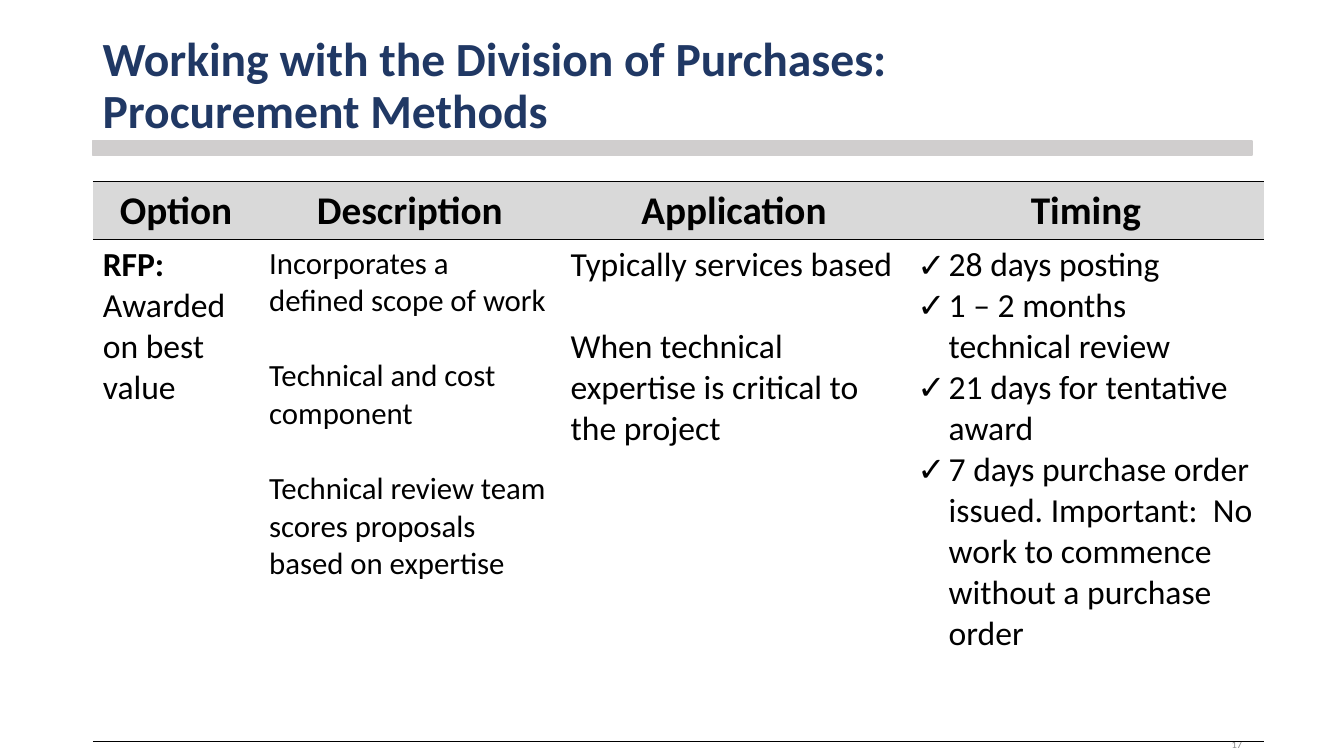
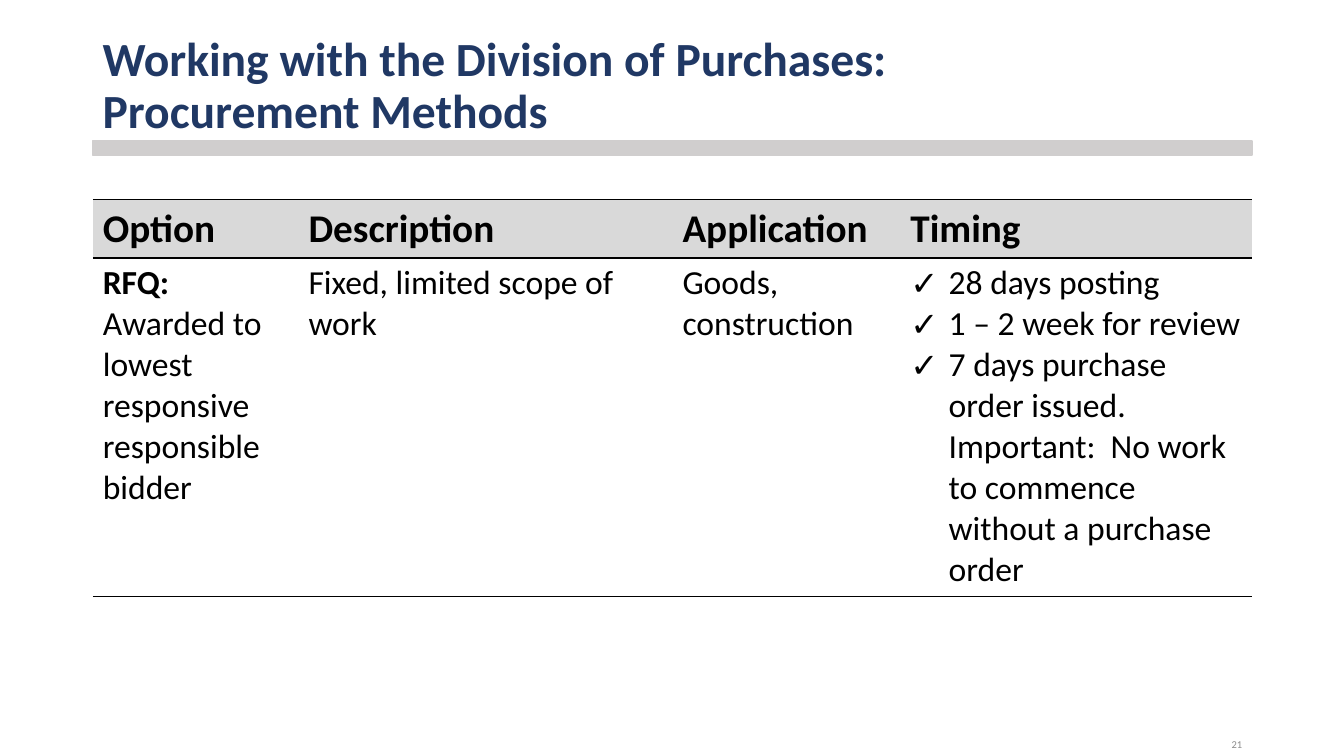
import pptx
import pptx.dml.color
import pptx.enum.shapes
import pptx.enum.text
import pptx.oxml.ns
import pptx.util
from lxml import etree

Inches = pptx.util.Inches
Pt = pptx.util.Pt
ALIGN = pptx.enum.text.PP_ALIGN
ANCHOR = pptx.enum.text.MSO_ANCHOR


def colour(value):
    return pptx.dml.color.RGBColor.from_string(value)


def add_xml(parent, tag, **attributes):
    return etree.SubElement(parent, pptx.oxml.ns.qn(tag), attributes)


def write(frame, text, size=24, ink="000000", bold=False, align=ALIGN.LEFT,
          lead="", gap=0, spacing=None, indent=0):
    for number, line in enumerate(text.split("\n")):
        paragraph = frame.add_paragraph() if number else frame.paragraphs[0]
        paragraph.alignment = align
        if spacing:
            paragraph.line_spacing = spacing
        if number and gap:
            paragraph.space_before = Pt(gap)
        if indent:
            properties = paragraph._p.get_or_add_pPr()
            properties.set("marL", str(Inches(indent)))
            properties.set("indent", str(-Inches(indent)))
            add_xml(properties, "a:buFont", typeface="Arial")
            add_xml(properties, "a:buChar", char="✓")
        start = len(lead) if lead and line.startswith(lead) else 0
        for part, heavy in ((line[:start], True), (line[start:], bold)):
            if part:
                run = paragraph.add_run()
                run.text = part
                run.font.name = Deck.FONT
                run.font.size = Pt(size)
                run.font.bold = heavy
                run.font.color.rgb = colour(ink)


class Deck:
    """Holds the shared style and the current slide of the procurement deck."""

    FONT = "Calibri"
    NAVY = "203864"
    BAND = "D0CECE"
    HEADER = "D9D9D9"
    RULE = "000000"
    FOOTER = "8C8C8C"
    LEFT = 0.92
    WIDTH = 11.5
    HEADER_HEIGHT = 0.58

    def __init__(self):
        self.presentation = pptx.Presentation()
        self.presentation.slide_width = Inches(13.33)
        self.presentation.slide_height = Inches(7.5)
        self.slide = None

    def add_slide(self, title, number):
        layout = self.presentation.slide_layouts[6]
        self.slide = self.presentation.slides.add_slide(layout)
        self.band()
        self.label(title, self.LEFT, 0.4, self.WIDTH, 0.93,
                   size=34, ink=self.NAVY, bold=True, spacing=0.9)
        self.label(number, 9.42, 7.26, 3, 0.25,
                   size=7.5, ink=self.FOOTER, align=ALIGN.RIGHT)

    def band(self):
        band = self.slide.shapes.add_shape(
            pptx.enum.shapes.MSO_SHAPE.RECTANGLE, Inches(self.LEFT),
            Inches(1.4), Inches(self.WIDTH), Inches(0.14))
        band.shadow.inherit = False
        band.fill.solid()
        band.fill.fore_color.rgb = colour(self.BAND)
        band.line.color.rgb = colour(self.BAND)
        band.line.width = Pt(1)

    def label(self, text, left, top, width, height, **style):
        label = self.slide.shapes.add_textbox(
            Inches(left), Inches(top), Inches(width), Inches(height))
        frame = label.text_frame
        frame.word_wrap = True
        frame.vertical_anchor = ANCHOR.MIDDLE
        write(frame, text, **style)

    def borders(self, cell):
        properties = cell._tc.get_or_add_tcPr()
        for side in ("L", "R", "T", "B"):
            edge = add_xml(properties, f"a:ln{side}", w=str(Pt(1)))
            if side in "LR":
                add_xml(edge, "a:noFill")
            else:
                ink = add_xml(edge, "a:solidFill")
                add_xml(ink, "a:srgbClr", val=self.RULE)

    def methods_table(self, top, body_height, widths, body, header_align):
        headings = ("Option", "Description", "Application", "Timing")
        grid = self.slide.shapes.add_table(
            2, len(widths), Inches(self.LEFT), Inches(top),
            Inches(sum(widths)), Inches(self.HEADER_HEIGHT + body_height)).table
        grid.first_row = False
        grid.horz_banding = False
        grid.rows[0].height = Inches(self.HEADER_HEIGHT)
        grid.rows[1].height = Inches(body_height)
        for column, (width, heading, (text, style)) in enumerate(
                zip(widths, headings, body)):
            grid.columns[column].width = Inches(width)
            header, detail = grid.cell(0, column), grid.cell(1, column)
            self.borders(header)
            self.borders(detail)
            header.fill.solid()
            header.fill.fore_color.rgb = colour(self.HEADER)
            detail.fill.background()
            header.vertical_anchor = ANCHOR.BOTTOM
            write(header.text_frame, heading, size=28, bold=True,
                  align=header_align)
            write(detail.text_frame, text, **style)


def main():
    deck = Deck()
    title = "Working with the Division of Purchases:\nProcurement Methods"
    order_step = ("7 days purchase order issued. Important:  No work to "
                  "commence without a purchase order")

    deck.add_slide(title, "17")
    proposals = (
        ("RFP:\nAwarded on best value", dict(lead="RFP:")),
        ("Incorporates a defined scope of work\n"
         "Technical and cost component\n"
         "Technical review team scores proposals based on expertise",
         dict(size=22, gap=27)),
        ("Typically services based\n"
         "When technical expertise is critical to the project", dict(gap=29)),
        ("28 days posting\n1 – 2 months technical review\n"
         "21 days for tentative award\n" + order_step, dict(indent=0.31)),
    )
    deck.methods_table(1.8, 4.98, (1.65, 2.99, 3.44, 3.54), proposals,
                       ALIGN.CENTER)

    deck.add_slide(title, "21")
    quotes = (
        ("RFQ: Awarded to lowest responsive responsible bidder",
         dict(lead="RFQ:")),
        ("Fixed, limited scope of work", {}),
        ("Goods, construction", {}),
        ("28 days posting\n1 – 2 week for review\n" + order_step,
         dict(indent=0.38)),
    )
    deck.methods_table(1.98, 3.36, (2.04, 3.71, 2.26, 3.49), quotes,
                       ALIGN.LEFT)

    deck.presentation.save("out.pptx")


if __name__ == "__main__":
    main()
